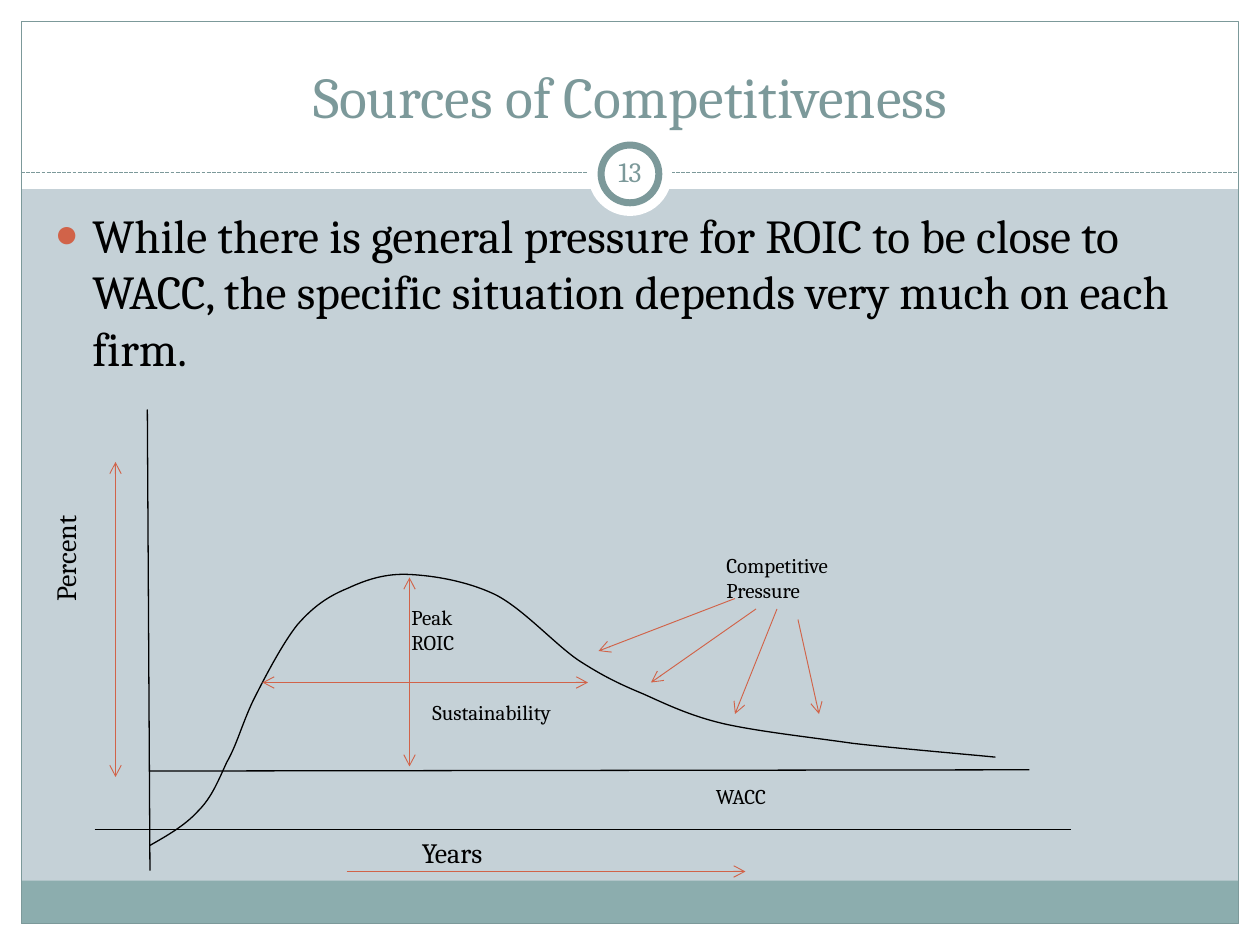
from collections import namedtuple

from lxml.etree import SubElement
from pptx import Presentation
from pptx.dml.color import RGBColor
from pptx.enum.dml import MSO_LINE
from pptx.enum.shapes import MSO_CONNECTOR, MSO_SHAPE
from pptx.enum.text import MSO_ANCHOR, MSO_AUTO_SIZE, PP_ALIGN
from pptx.oxml.ns import qn
from pptx.util import Pt

Box = namedtuple("Box", "left top width height")

COLORS = {
    "background": "C5D1D7",
    "white": "FFFFFF",
    "strip": "8CADAE",
    "slate": "7C999A",
    "accent": "D16349",
    "black": "000000",
}
FONT = "Cambria"

CURVE = [
    (61.7, 255.1),
    (71.8, 249.4), (81.8, 243.6), (89, 235.7),
    (97, 227.8), (100.6, 218.4), (105.6, 207.6),
    (111.4, 197.5), (114.2, 186), (120.7, 172.3),
    (127.2, 159.4), (137.3, 139.9), (145.9, 129.1),
    (155.3, 118.3), (163.9, 112.6), (174.7, 108.2),
    (185.5, 103.2), (196.3, 99.6), (210, 100.3),
    (223.7, 101), (242.4, 103.9), (259, 111.8),
    (274.8, 119.8), (292.8, 139.9), (306.5, 149.3),
    (320.9, 158.6), (330.2, 163), (343.9, 168.7),
    (358.3, 175.2), (372, 181.7), (391.4, 186),
    (411.6, 190.3), (438.2, 193.2), (463.4, 196.8),
    (488.6, 199.7), (531.1, 203.3), (544.8, 204.7),
]
BLACK_LINES = [
    ((60.2, 6), (61.7, 269.5), 0.75),
    ((61.7, 212.6), (564.2, 211.9), 0.75),
    ((30, 246), (588, 246), 0.55),
]
DOUBLE_ARROWS = [
    ((42, 216), (42, 36)),
    ((126, 162), (312, 162)),
    ((210, 102), (210, 210)),
]
SINGLE_ARROWS = [
    ((174, 270), (402, 270)),
    ((396, 114), (318, 144)),
    ((408, 120), (348, 162)),
    ((420, 120), (396, 180)),
    ((432, 126), (444, 180)),
]
LABELS = [
    ("Years", Box(210, 246, 78, 26.6), 16),
    ("Sustainability", Box(216, 168, 114, 21.6), 12),
    ("Peak ROIC", Box(204, 114, 54, 36), 12),
    ("WACC", Box(378, 216, 96, 21.6), 12),
    ("Competitive Pressure", Box(384, 84, 114, 36), 12),
]


def rgb(name):
    return RGBColor.from_string(COLORS[name])


def apply_format(target, values):
    for name, value in values.items():
        setattr(target, name, value)


def place_on_top(slide, shape, box):
    apply_format(shape, {name: Pt(value) for name, value in box._asdict().items()})
    slide.shapes._spTree.append(shape._element)


def inside(area, box):
    return Box(area.left + box.left, area.top + box.top, box.width, box.height)


def write(shape, text, size, color, frame_format, align=PP_ALIGN.LEFT):
    frame = shape.text_frame
    apply_format(frame, {"word_wrap": True, "auto_size": MSO_AUTO_SIZE.NONE, **frame_format})
    paragraph = frame.paragraphs[0]
    paragraph.alignment = align
    run = paragraph.add_run()
    run.text = text
    apply_format(run.font, {"name": FONT, "size": Pt(size)})
    run.font.color.rgb = rgb(color)
    return paragraph


def add_label(slide, text, box, size, color="black", align=PP_ALIGN.LEFT, **frame_format):
    shape = slide.shapes.add_textbox(*map(Pt, box))
    write(shape, text, size, color, frame_format, align)
    return shape


def add_block(slide, box, fill=None, line=None, width=0.75, kind=MSO_SHAPE.RECTANGLE):
    shape = slide.shapes.add_shape(kind, *map(Pt, box))
    shape.shadow.inherit = False
    for part, color in ((shape.fill, fill), (shape.line.fill, line)):
        if color:
            part.solid()
            part.fore_color.rgb = rgb(color)
        else:
            part.background()
    if line:
        shape.line.width = Pt(width)


def add_line(slide, area, start, end, color, width=0.55, arrows=()):
    points = [Pt(value) for x, y in (start, end) for value in (area.left + x, area.top + y)]
    connector = slide.shapes.add_connector(MSO_CONNECTOR.STRAIGHT, *points)
    connector.line.color.rgb = rgb(color)
    connector.line.width = Pt(width)
    SubElement(connector._element.spPr, qn("a:effectLst"))
    for end_name in arrows:
        SubElement(connector.line._get_or_add_ln(), qn(f"a:{end_name}"), type="arrow")
    return connector


def add_frame(slide, box):
    margin = 12.2
    add_block(slide, Box(0, box.height - margin, box.width, margin), "white")
    add_block(slide, Box(0, 0, box.width, 108), "white")
    for left in (0, box.width - margin):
        add_block(slide, Box(left, 0, margin, box.height), "white")
    inner = Box(margin, margin, box.width - 2 * margin, box.height - 2 * margin)
    add_block(slide, Box(margin, 503.3, inner.width, 24.5), "strip")
    add_block(slide, inner, line="slate")


def add_header(slide, box):
    rule = add_line(slide, box, (0, 86.6), (box.width, 86.6), "slate", 0.75)
    rule.line.dash_style = MSO_LINE.SQUARE_DOT
    center_x, center_y = box.left + box.width / 2, box.top + 87.4
    for size, line in ((48, None), (33, "slate")):
        badge = Box(center_x - size / 2, center_y - size / 2, size, size)
        add_block(slide, badge, "white", line, 4, MSO_SHAPE.OVAL)
    insets = {f"margin_{side}": Pt(3.6) for side in ("left", "top", "right", "bottom")}
    add_label(slide, "13", Box(center_x - 18, center_y - 18.9, 36, 34.6), 16, "slate",
              PP_ALIGN.CENTER, vertical_anchor=MSO_ANCHOR.MIDDLE, **insets)
    title = slide.shapes.title
    place_on_top(slide, title, inside(box, Box(12, 6, box.width - 24, 60)))
    write(title, "Sources of Competitiveness", 33, "slate",
          {"vertical_anchor": MSO_ANCHOR.BOTTOM}, PP_ALIGN.CENTER)


def add_body(slide, box):
    body = slide.placeholders[1]
    place_on_top(slide, body, box)
    paragraph = write(
        body,
        "While there is general pressure for ROIC to be close to WACC, "
        "the specific situation depends very much on each firm.",
        27, "black", {"vertical_anchor": MSO_ANCHOR.TOP})
    properties = paragraph._p.get_or_add_pPr()
    properties.set("marL", str(Pt(21.6)))
    properties.set("indent", str(-Pt(21.6)))
    bullet_color = SubElement(properties, qn("a:buClr"))
    SubElement(bullet_color, qn("a:srgbClr"), val=COLORS["accent"])
    SubElement(properties, qn("a:buSzPct"), val="85000")
    SubElement(properties, qn("a:buChar"), char="●")


def add_curve(slide, area):
    points = [(Pt(area.left + x), Pt(area.top + y)) for x, y in CURVE]
    builder = slide.shapes.build_freeform(*points[0])
    builder.add_line_segments(points[1:], close=False)
    curve = builder.convert_to_shape()
    curve.shadow.inherit = False
    curve.fill.background()
    curve.line.color.rgb = rgb("black")
    curve.line.width = Pt(0.75)
    outline = next(curve._element.iter(qn("a:path")))
    segments = list(outline.iter(qn("a:lnTo")))
    for first in range(0, len(segments), 3):
        bezier = SubElement(outline, qn("a:cubicBezTo"))
        for segment in segments[first:first + 3]:
            bezier.append(segment[0])
            outline.remove(segment)


def add_diagram(slide, box):
    for start, end, width in BLACK_LINES:
        add_line(slide, box, start, end, "black", width)
    add_curve(slide, box)
    for start, end in DOUBLE_ARROWS:
        add_line(slide, box, start, end, "accent", arrows=("headEnd", "tailEnd"))
    for start, end in SINGLE_ARROWS:
        add_line(slide, box, start, end, "accent", arrows=("tailEnd",))
    for text, label_box, size in LABELS:
        add_label(slide, text, inside(box, label_box), size)
    percent = add_label(slide, "Percent", inside(box, Box(0, 48, 33.6, 75)), 16)
    percent.text_frame._txBody.bodyPr.set("vert", "vert270")


def main():
    presentation = Presentation()
    apply_format(presentation, {"slide_width": Pt(720), "slide_height": Pt(540)})
    slide = presentation.slides.add_slide(presentation.slide_layouts[1])
    slide.background.fill.solid()
    slide.background.fill.fore_color.rgb = rgb("background")
    add_frame(slide, Box(0, 0, 720, 540))
    add_header(slide, Box(12, 12, 696, 96))
    add_diagram(slide, Box(24, 228, 588, 276))
    add_body(slide, Box(24, 114, 669.6, 114))
    presentation.save("out.pptx")


if __name__ == "__main__":
    main()
